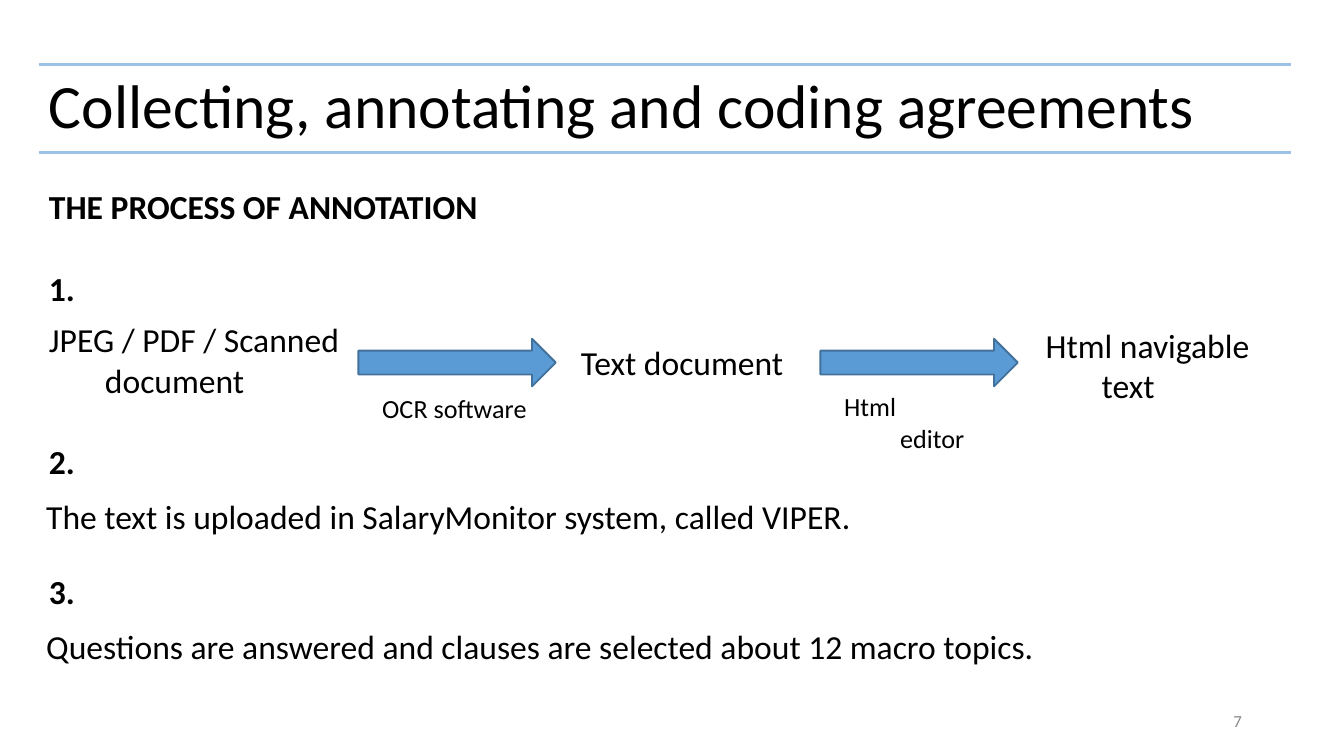
import pptx
import pptx.util
import pptx.dml.color
import pptx.enum.shapes
import pptx.enum.text
import pptx.oxml.ns
from lxml import etree

RGBColor = pptx.dml.color.RGBColor
Pt = pptx.util.Pt
Align = pptx.enum.text.PP_ALIGN
Anchor = pptx.enum.text.MSO_ANCHOR

BLACK = RGBColor(0x00, 0x00, 0x00)
GREY = RGBColor(0x88, 0x88, 0x88)
RULE_BLUE = RGBColor(0x9C, 0xC2, 0xE5)
ARROW_FILL = RGBColor(0x5B, 0x9B, 0xD5)
ARROW_LINE = RGBColor(0x42, 0x71, 0x9B)
FONT = "Calibri"
LEFT, WIDTH = 28, 894
INDENT = 40


def px(length):
    return pptx.util.Emu(length * 9525)


def add_text(page, lines, left, top, width, height, size=18, bold=False,
             color=BLACK, anchor=Anchor.TOP, align=Align.LEFT,
             hanging=INDENT, gap=0, spacing=1.0):
    box = page.shapes.add_textbox(px(left), px(top), px(width), px(height))
    frame = box.text_frame
    frame.word_wrap = True
    frame.vertical_anchor = anchor
    frame.margin_left = frame.margin_right = px(7)
    frame.margin_top = frame.margin_bottom = px(4)
    frame.text = "\n".join(lines)
    for index, para in enumerate(frame.paragraphs):
        para.alignment = align
        para.line_spacing = spacing
        para.space_before = Pt(gap if index else 0)
        para.font.name = FONT
        para.font.size = Pt(size)
        para.font.bold = bold
        para.font.color.rgb = color
        properties = para._p.get_or_add_pPr()
        properties.set("marL", str(px(hanging)))
        properties.set("indent", str(px(-hanging)))


def add_rule(page, top):
    rule = page.shapes.add_connector(
        pptx.enum.shapes.MSO_CONNECTOR.STRAIGHT,
        px(LEFT), px(top), px(LEFT + WIDTH), px(top))
    rule.line.color.rgb = RULE_BLUE
    rule.line.width = Pt(1.5)
    etree.SubElement(rule._element.spPr, pptx.oxml.ns.qn("a:effectLst"))


def add_arrow(page, left):
    arrow = page.shapes.add_shape(
        pptx.enum.shapes.MSO_SHAPE.RIGHT_ARROW,
        px(left), px(242), px(141), px(34))
    arrow.shadow.inherit = False
    arrow.fill.solid()
    arrow.fill.fore_color.rgb = ARROW_FILL
    arrow.line.color.rgb = ARROW_LINE
    arrow.line.width = Pt(1)


def add_step(page, number, sentence, top, width):
    add_text(page, [number], LEFT, top, WIDTH, 34, bold=True)
    add_text(page, [sentence], 26, top + 39, width, 48)


def add_conversion(page):
    add_text(page, ["JPEG / PDF / Scanned document"], LEFT, 224, 228, 64)
    add_arrow(page, 256)
    add_text(page, ["OCR software"], 266, 276, 121, 28, size=14)
    add_text(page, ["Text document"], 408, 240, 179, 36)
    add_arrow(page, 586)
    add_text(page, ["Html\veditor"], 596, 275, 102, 29, size=14)
    add_text(page, ["Html navigable text"], 740, 228, 166, 64)


def main():
    deck = pptx.Presentation()
    deck.slide_width, deck.slide_height = px(960), px(540)
    page = deck.slides.add_slide(deck.slide_layouts[6])

    add_text(page, ["Collecting, annotating and coding agreements"],
             LEFT, 25, WIDTH, 105, size=33, anchor=Anchor.MIDDLE,
             hanging=0, spacing=0.9)
    add_text(page, ["7"], 678, 500, 216, 29, size=9, color=GREY,
             anchor=Anchor.MIDDLE, align=Align.RIGHT, hanging=0)
    for top in (46, 109):
        add_rule(page, top)

    add_text(page, ["THE PROCESS OF ANNOTATION", "1."],
             LEFT, 129, WIDTH, 91, bold=True, gap=22)
    add_conversion(page)
    add_step(page, "2.",
             "The text is uploaded in SalaryMonitor system, called VIPER.",
             311, 620)
    add_step(page, "3.",
             "Questions are answered and clauses are selected about 12 macro topics.",
             404, 793)
    deck.save("out.pptx")


if __name__ == "__main__":
    main()
